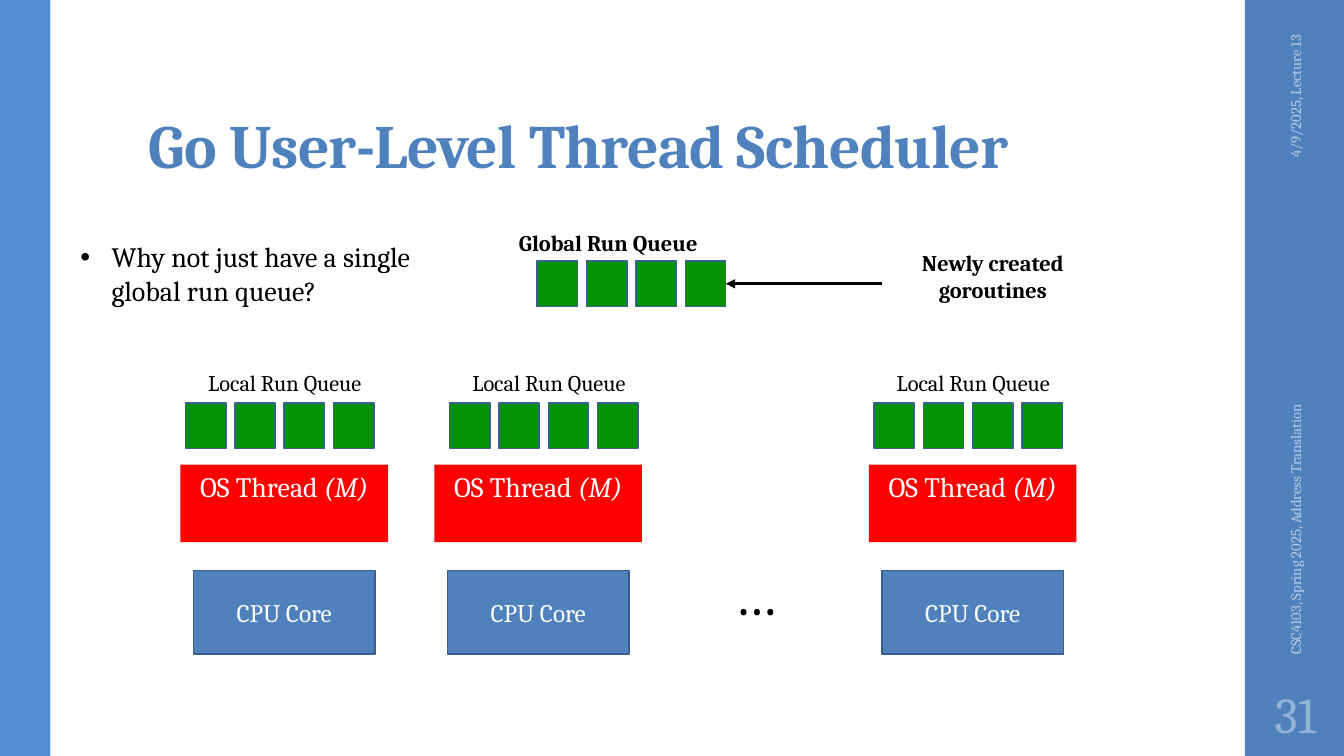
"""Build the slide about the Go user-level thread scheduler."""
import pptx
import pptx.dml.color
import pptx.enum.dml
import pptx.enum.shapes
import pptx.enum.text
import pptx.oxml.ns
import pptx.util
from lxml import etree

RGBColor = pptx.dml.color.RGBColor
ALIGN = pptx.enum.text.PP_ALIGN
ANCHOR = pptx.enum.text.MSO_ANCHOR

BLUE = RGBColor(0x4F, 0x81, 0xBD)
LIGHT_BLUE = RGBColor(0x55, 0x8E, 0xD5)
OUTLINE_BLUE = RGBColor(0x3A, 0x5F, 0x8C)
PALE_BLUE = RGBColor(0xB9, 0xCD, 0xE5)
NUMBER_BLUE = RGBColor(0x95, 0xB3, 0xD7)
GREEN = RGBColor(0x03, 0x92, 0x02)
RED = RGBColor(0xFF, 0x00, 0x00)
WHITE = RGBColor(0xFF, 0xFF, 0xFF)
BLACK = RGBColor(0x00, 0x00, 0x00)

COLUMNS, ROWS = 133.33, 75
QUEUE_LENGTH, QUEUE_STEP = 4, 4.9
BOX_WIDTH, BOX_HEIGHT = 4, 4.5


class SchedulerSlide:
    """Hold the style and the slide, and place elements in grid units."""

    font = "Cambria"
    outline_width = 1.1

    def __init__(self, deck):
        self.column = deck.slide_width / COLUMNS
        self.row = deck.slide_height / ROWS
        self.shapes = deck.slides.add_slide(deck.slide_layouts[6]).shapes

    def place(self, left, top, width, height):
        return (round(left * self.column), round(top * self.row),
                round(width * self.column), round(height * self.row))

    def label(self, shape, runs, size, color, align, anchor, bold=False):
        frame = shape.text_frame
        frame.word_wrap = True
        frame.vertical_anchor = anchor
        para = frame.paragraphs[0]
        para.alignment = align
        for text, italic in runs:
            span = para.add_run()
            span.text = text
            span.font.name = self.font
            span.font.size = pptx.util.Pt(size)
            span.font.color.rgb = color
            span.font.bold = bold
            span.font.italic = italic

    def text(self, area, words, size, color=BLACK, align=ALIGN.CENTER,
             anchor=ANCHOR.TOP, bold=False, rotation=0):
        box = self.shapes.add_textbox(*self.place(*area))
        box.rotation = rotation
        self.label(box, [(words, False)], size, color, align, anchor, bold)
        return box

    def title(self, area, words):
        box = self.text(area, words, 44, BLUE, ALIGN.LEFT, ANCHOR.BOTTOM, True)
        box.text_frame.margin_top = pptx.util.Inches(0.03)
        para = box.text_frame.paragraphs[0]
        para.line_spacing = 0.9
        para.runs[0].font._element.set("spc", "-50")

    def bullet(self, area, words):
        box = self.text(area, words, 20, align=ALIGN.LEFT)
        properties = box.text_frame.paragraphs[0]._p.get_or_add_pPr()
        indent = pptx.util.Inches(0.31)
        properties.set("marL", str(indent))
        properties.set("indent", str(-indent))
        for tag, name, value in (("a:buFont", "typeface", "Arial"),
                                 ("a:buChar", "char", "•")):
            etree.SubElement(properties, pptx.oxml.ns.qn(tag)).set(name, value)

    def rectangle(self, area, fill, outline=None):
        box = self.shapes.add_shape(
            pptx.enum.shapes.MSO_SHAPE.RECTANGLE, *self.place(*area))
        box.shadow.inherit = False
        box.fill.solid()
        box.fill.fore_color.rgb = fill
        if outline is None:
            box.line.fill.background()
        else:
            box.line.color.rgb = outline
            box.line.width = pptx.util.Pt(self.outline_width)
        return box

    def queue(self, left, top):
        return [self.rectangle(
            (left + QUEUE_STEP * place, top, BOX_WIDTH, BOX_HEIGHT),
            GREEN, OUTLINE_BLUE) for place in range(QUEUE_LENGTH)]

    def processor(self, left, queue_left):
        core = self.rectangle((left + 1.3, 56.6, 18, 8.3), BLUE, OUTLINE_BLUE)
        self.label(core, [("CPU Core", False)], 18, WHITE,
                   ALIGN.CENTER, ANCHOR.MIDDLE)
        thread = self.rectangle((left, 46.1, 20.6, 7.7), RED)
        self.label(thread, [("OS Thread ", False), ("(M)", True)], 20, WHITE,
                   ALIGN.CENTER, ANCHOR.TOP)
        self.queue(queue_left, 40)
        self.text((queue_left - 1.7, 36.1, 23.1, 3.7), "Local Run Queue", 16)

    def arrow_to(self, target, start_left, row):
        left, top = self.place(start_left, row, 0, 0)[:2]
        arrow = self.shapes.add_connector(
            pptx.enum.shapes.MSO_CONNECTOR.STRAIGHT, left, top,
            target.left + target.width, top)
        arrow.end_connect(target, 3)
        arrow.line.color.rgb = BLACK
        arrow.line.width = pptx.util.Pt(2.25)
        line = arrow.line._get_or_add_ln()
        etree.SubElement(line, pptx.oxml.ns.qn("a:tailEnd")).set("type", "triangle")
        etree.SubElement(arrow._element.spPr, pptx.oxml.ns.qn("a:effectLst"))


def main():
    deck = pptx.Presentation()
    deck.slide_width = pptx.util.Inches(13.333)
    deck.slide_height = pptx.util.Inches(7.5)
    slide = SchedulerSlide(deck)

    slide.rectangle((123.5, 0, COLUMNS - 123.5, ROWS), BLUE)
    slide.rectangle((0, 0, 5, ROWS), LIGHT_BLUE)
    slide.title((13.8, 3.2, 106, 15.3), "Go User-Level Thread Scheduler")
    slide.text((118.1, 10.9, 20.8, 4), "4/9/2025, Lecture 13", 10.5, PALE_BLUE,
               ALIGN.RIGHT, ANCHOR.MIDDLE, rotation=270)
    slide.text((108.9, 44.3, 39.2, 4), "CSC4103, Spring 2025, Address Translation",
               10.5, PALE_BLUE, ALIGN.LEFT, ANCHOR.MIDDLE, rotation=270)
    number = slide.text((123.5, 67.5, 10, 6.5), "31", 36, NUMBER_BLUE,
                        anchor=ANCHOR.MIDDLE)
    number.text_frame.margin_left = pptx.util.Inches(0.05)
    number.text_frame.margin_right = pptx.util.Inches(0.05)

    for left, queue_left in ((17.9, 18.4), (43.1, 44.6), (86.2, 86.7)):
        slide.processor(left, queue_left)
    slide.text((67.6, 55, 14.7, 7.7), "…", 40)

    global_queue = slide.queue(53.3, 25.9)
    slide.text((50.5, 22.2, 25.2, 3.7), "Global Run Queue", 16,
               align=ALIGN.LEFT, bold=True)
    slide.arrow_to(global_queue[-1], 87.5, 28.15)
    slide.text((88.7, 24.2, 19.6, 6.4), "Newly created goroutines", 16, bold=True)
    slide.bullet((7, 23.3, 39.4, 7.7), "Why not just have a single global run queue?")

    deck.save("out.pptx")


if __name__ == "__main__":
    main()
